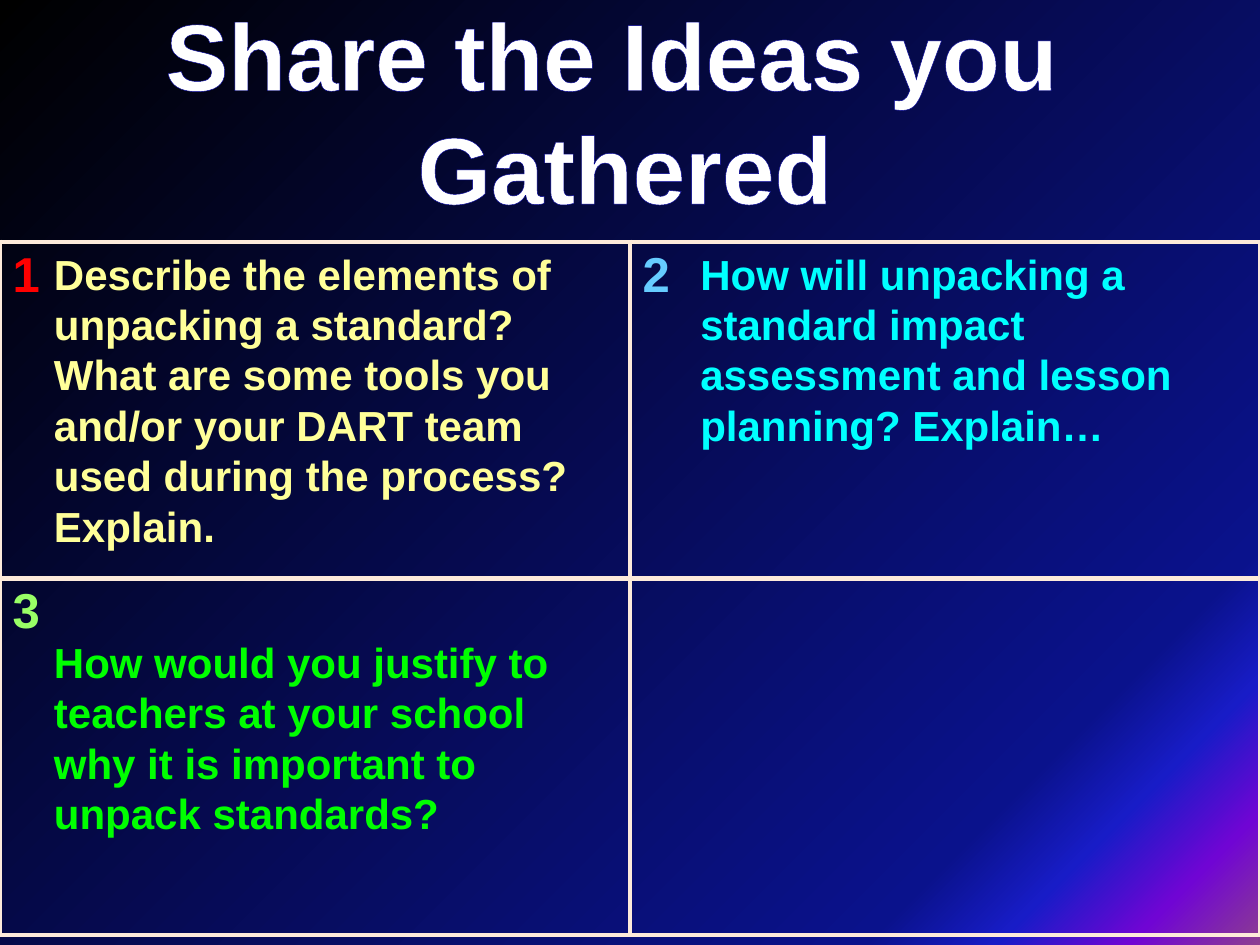
import pptx
import pptx.dml.color
import pptx.enum.text
import pptx.oxml
import pptx.oxml.ns
import pptx.util

THEME = {
    "font": "Arial",
    "title_size": 54, "number_size": 28, "question_size": 24,
    "title": "FFFFFF", "title_outline": "000099", "border": "FDEADA",
    "numbers": ["FF0000", "66CCFF", "99FF66"],
    "questions": ["FFFF99", "00FFFF", "00FF00"],
    "backdrop": [(0, "000000"), (82, "0A128C"), (88, "181CC7"),
                 (94, "7005D4"), (100, "8C3D91")],
}
NAMESPACE = pptx.oxml.ns.nsdecls("a")
inches = pptx.util.Inches


def write(para, text, size, color, align=None):
    para.alignment = align
    span = para.add_run()
    span.text = text
    span.font.name = THEME["font"]
    span.font.size = pptx.util.Pt(size)
    span.font.bold = True
    span.font.color.rgb = pptx.dml.color.RGBColor.from_string(color)
    return span


deck = pptx.Presentation()
deck.slide_width, deck.slide_height = inches(10), inches(7.5)
page = deck.slides.add_slide(deck.slide_layouts[5])

# Background
backdrop = page.background.fill
backdrop.gradient()
backdrop.gradient_angle = 315
stops = "".join(f'<a:gs pos="{share * 1000}"><a:srgbClr val="{color}"/></a:gs>'
                for share, color in THEME["backdrop"])
old_stops = page.background._cSld.find(".//" + pptx.oxml.ns.qn("a:gsLst"))
old_stops.getparent().replace(
    old_stops, pptx.oxml.parse_xml(f"<a:gsLst {NAMESPACE}>{stops}</a:gsLst>"))

# Grid of numbered cells
grid_top, column_width, row_heights = 1.92, 5, [2.67, 2.83]
frame = page.shapes.add_table(2, 2, 0, inches(grid_top), deck.slide_width,
                              inches(sum(row_heights)))
table = frame.table
table.first_row = table.horz_banding = False
for row, height in zip(table.rows, row_heights):
    row.height = inches(height)
for index, cell in enumerate(table.iter_cells()):
    cell.fill.background()
    properties = cell._tc.get_or_add_tcPr()
    for position, side in enumerate(["lnL", "lnR", "lnT", "lnB"]):
        properties.insert(position, pptx.oxml.parse_xml(
            f'<a:{side} {NAMESPACE} w="{pptx.util.Pt(3)}"><a:solidFill>'
            f'<a:srgbClr val="{THEME["border"]}"/></a:solidFill></a:{side}>'))
    if index < len(THEME["numbers"]):
        write(cell.text_frame.paragraphs[0], str(index + 1),
              THEME["number_size"], THEME["numbers"][index])

# Questions over the cells: left, top, width, height, text
questions = [
    (0.33, grid_top, 4.75, 2.52,
     "Describe the elements of unpacking a standard? What are some tools you "
     "and/or your DART team used during the process? Explain."),
    (column_width + 0.46, grid_top, 4.5, 1.72,
     "How will unpacking a standard impact assessment and lesson planning? "
     "Explain…"),
    (0.33, 5, 4.58, 1.72,
     "How would you justify to teachers at your school why it is important to "
     "unpack standards?"),
]
for (*place, text), color in zip(questions, THEME["questions"]):
    box = page.shapes.add_textbox(*map(inches, place))
    box.text_frame.word_wrap = True
    box.text_frame.auto_size = pptx.enum.text.MSO_AUTO_SIZE.SHAPE_TO_FIT_TEXT
    write(box.text_frame.paragraphs[0], text, THEME["question_size"], color)

# Title
title = page.shapes.title
title.left, title.top, title.width, title.height = map(
    inches, (1.18, -0.08, 7.56, 1.92))
title_frame = title.text_frame
title_frame.word_wrap = False
title_frame.auto_size = pptx.enum.text.MSO_AUTO_SIZE.SHAPE_TO_FIT_TEXT
title_frame.vertical_anchor = pptx.enum.text.MSO_ANCHOR.TOP
title_frame.add_paragraph()
for para, text in zip(title_frame.paragraphs, ["Share the Ideas you ", "Gathered"]):
    span = write(para, text, THEME["title_size"], THEME["title"],
                 align=pptx.enum.text.PP_ALIGN.CENTER)
    span.font._element.insert(0, pptx.oxml.parse_xml(
        f'<a:ln {NAMESPACE} w="{pptx.util.Pt(0.75)}"><a:solidFill>'
        f'<a:srgbClr val="{THEME["title_outline"]}"/></a:solidFill></a:ln>'))

deck.save("out.pptx")
